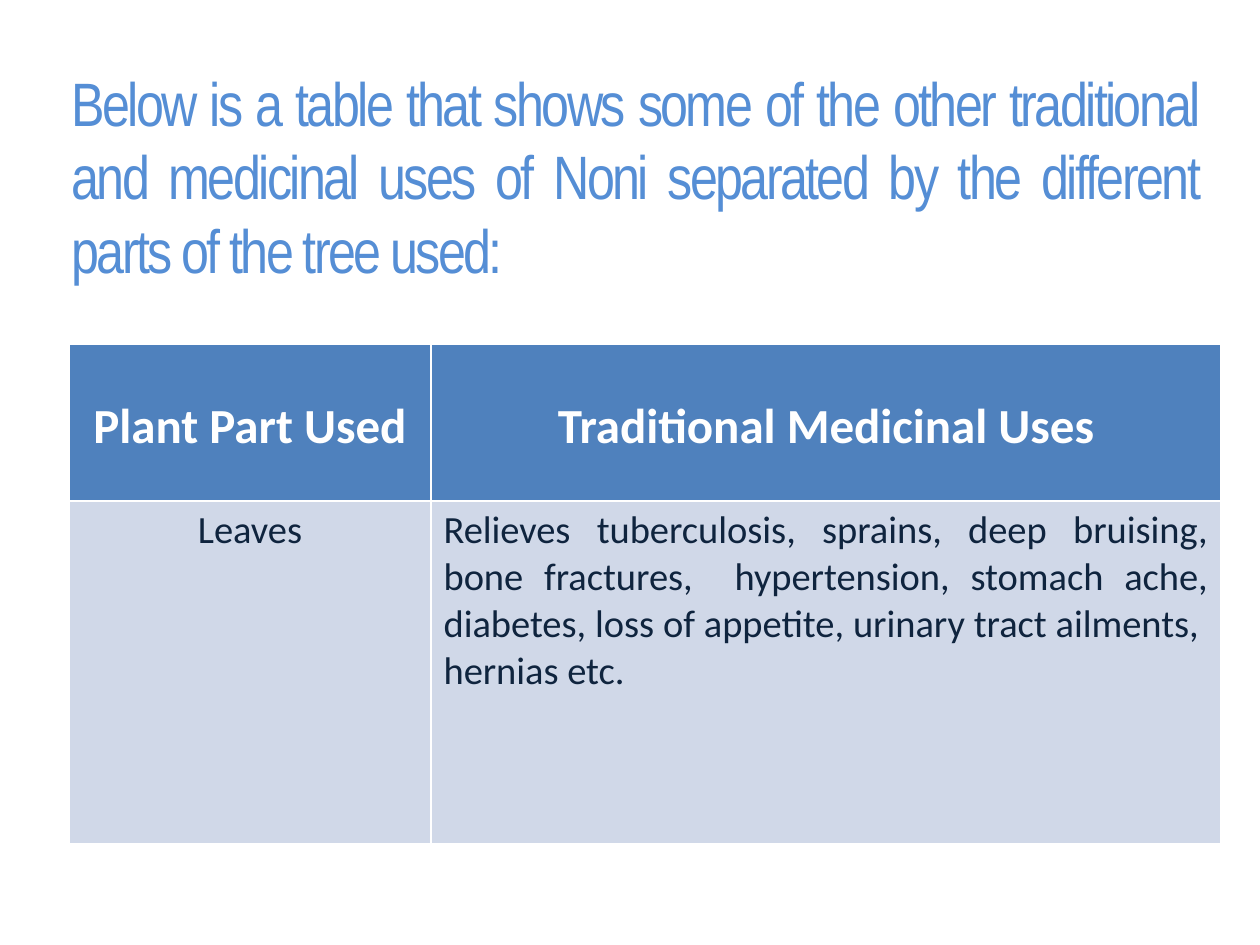
from pptx import Presentation
from pptx.dml.color import RGBColor
from pptx.enum.text import MSO_ANCHOR, PP_ALIGN
from pptx.util import Pt

# Content
TITLE = ("Below is a table that shows some of the other traditional and medicinal "
         "uses of Noni separated by the different parts of the tree used:")
ROWS = [
    ("Plant Part Used", "Traditional Medicinal Uses"),
    ("Leaves",
     "Relieves tuberculosis, sprains, deep bruising, bone fractures,  hypertension, "
     "stomach ache, diabetes, loss of appetite, urinary tract ailments,  hernias etc."),
]

# Layout in px, 126 to the inch
SLIDE = (1260, 945)
TITLE_BOX = (59, 59, 1152, 236)
TABLE_AT = (69, 344)
COL_WIDTHS = (362, 790)
ROW_HEIGHTS = (157, 343)
HEADER_INSET = 5


def px(n):
    return round(n * 914400 / 126)


def rgb(color):
    return RGBColor.from_string(color)


def add_text(tf, text, size, font, color, align, bold=False):
    p = tf.paragraphs[0]
    p.alignment = align
    r = p.add_run()
    r.text = text
    r.font.size = Pt(size)
    r.font.name = font
    r.font.bold = bold
    r.font.color.rgb = rgb(color)
    return p, r


prs = Presentation()
prs.slide_width, prs.slide_height = map(px, SLIDE)
s = prs.slides.add_slide(prs.slide_layouts[6])

# Title, with tightened letter spacing
tf = s.shapes.add_textbox(*map(px, TITLE_BOX)).text_frame
tf.word_wrap = True
p, r = add_text(tf, TITLE, 35, "Arial Narrow", "558ED5", PP_ALIGN.JUSTIFY)
r.font._element.set("spc", "-150")

# Table
size = (sum(COL_WIDTHS), sum(ROW_HEIGHTS))
table = s.shapes.add_table(len(ROWS), len(COL_WIDTHS), *map(px, TABLE_AT + size)).table
for col, width in zip(table.columns, COL_WIDTHS):
    col.width = px(width)
for row, height in zip(table.rows, ROW_HEIGHTS):
    row.height = px(height)

for i, texts in enumerate(ROWS):
    for j, text in enumerate(texts):
        cell = table.cell(i, j)
        cell.fill.solid()
        if i == 0:
            cell.fill.fore_color.rgb = rgb("4F81BD")
            cell.vertical_anchor = MSO_ANCHOR.MIDDLE
            cell.margin_left = cell.margin_right = px(HEADER_INSET)
            cell.margin_top = cell.margin_bottom = px(HEADER_INSET)
            p, r = add_text(cell.text_frame, text, 28, "Calibri", "FFFFFF",
                            PP_ALIGN.CENTER, bold=True)
            p.line_spacing = 1.15
            p.space_after = Pt(10)
        else:
            cell.fill.fore_color.rgb = rgb("D0D8E8")
            align = PP_ALIGN.JUSTIFY if j else PP_ALIGN.CENTER
            add_text(cell.text_frame, text, 22, "Calibri", "0F243E", align)

prs.save("out.pptx")
